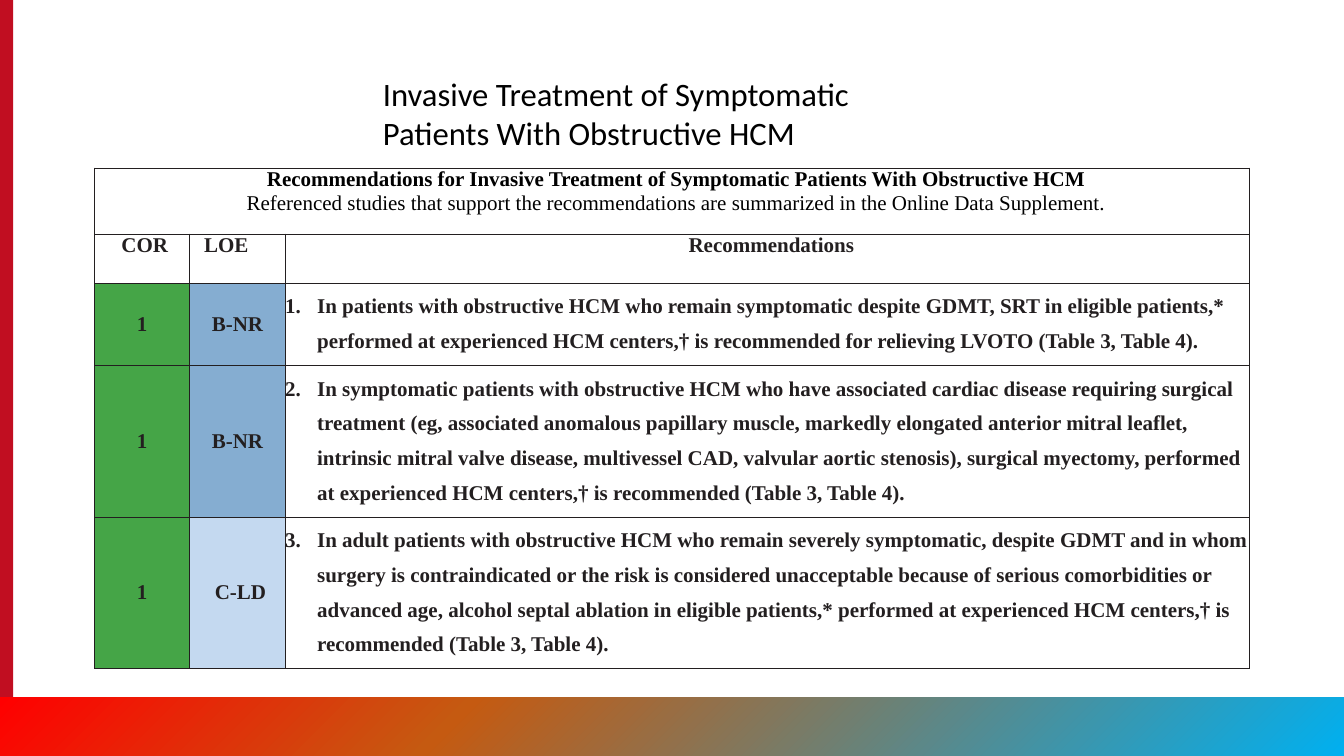
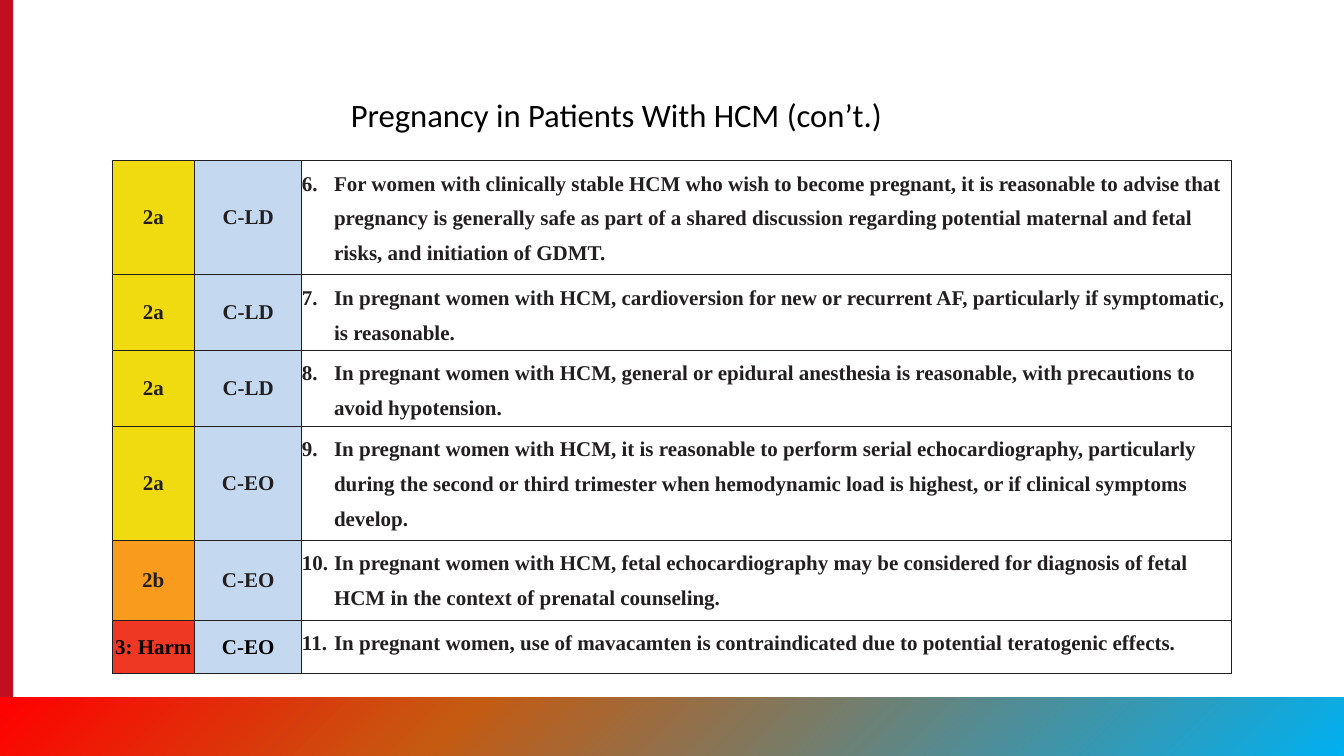
import pptx
import pptx.util
import pptx.dml.color
import pptx.enum.shapes
import pptx.enum.text
import pptx.oxml
from pptx.oxml.ns import nsdecls
from pptx.util import Cm

Align = pptx.enum.text.PP_ALIGN
Anchor = pptx.enum.text.MSO_ANCHOR
Color = pptx.dml.color.RGBColor.from_string

theme = {
    "ink": "231F20", "black": "000000", "white": "FFFFFF", "side": "C10E21",
    "band": [(0, "00B0F0"), (66, "C55A11"), (100, "FF0000")],
    "class": {"1": "45A547", "2a": "F0DA10", "2b": "F99B1C", "3: Harm": "EF3824"},
    "evidence": {"B-NR": "85ADD1", "C-LD": "C4D9F0", "C-EO": "C4D9F0"},
    "title": {"name": "Calibri", "size": pptx.util.Pt(28), "bold": False},
    "table": {"name": "Times New Roman", "size": pptx.util.Pt(18), "bold": True},
    "border": pptx.util.Pt(1),
    "number_indent": Cm(0.97),
    "line_spacing": 1.5,
}

pages = [
    {
        "title": "Invasive Treatment of Symptomatic Patients With Obstructive HCM",
        "title_at": (11.33, 2.11, 18.01, 2.64),
        "table_at": (2.86, 5.08),
        "columns": [2.88, 2.88, 29.16],
        "rows": [2, 1.48, 2.5, 4.56, 4.56],
        "heading": [
            "Recommendations for Invasive Treatment of Symptomatic Patients With Obstructive HCM",
            "Referenced studies that support the recommendations are summarized in the Online Data Supplement.",
        ],
        "labels": [("COR", Align.CENTER, 0.15), ("LOE", Align.LEFT, 0.43),
                   ("Recommendations", Align.CENTER, 0.25)],
        "first_number": 1,
        "items": [
            ("1", "B-NR", "In patients with obstructive HCM who remain symptomatic despite GDMT, SRT in eligible patients,* performed at experienced HCM centers,† is recommended for relieving LVOTO (Table 3, Table 4)."),
            ("1", "B-NR", "In symptomatic patients with obstructive HCM who have associated cardiac disease requiring surgical treatment (eg, associated anomalous papillary muscle, markedly elongated anterior mitral leaflet, intrinsic mitral valve disease, multivessel CAD, valvular aortic stenosis), surgical myectomy, performed at experienced HCM centers,† is recommended (Table 3, Table 4)."),
            ("1", "C-LD", "In adult patients with obstructive HCM who remain severely symptomatic, despite GDMT and in whom surgery is contraindicated or the risk is considered unacceptable because of serious comorbidities or advanced age, alcohol septal ablation in eligible patients,* performed at experienced HCM centers,† is recommended (Table 3, Table 4)."),
        ],
        "evidence_indent": {"C-LD": 0.18},
    },
    {
        "title": "Pregnancy in Patients With HCM (con’t.)",
        "title_at": (10.36, 2.74, 19.89, 1.45),
        "table_at": (3.39, 4.86),
        "columns": [2.49, 3.25, 28.12],
        "rows": [3.45, 2.29, 2.28, 3.45, 2.42, 1.61],
        "heading": [],
        "labels": [],
        "first_number": 6,
        "items": [
            ("2a", "C-LD", "For women with clinically stable HCM who wish to become pregnant, it is reasonable to advise that pregnancy is generally safe as part of a shared discussion regarding potential maternal and fetal risks, and initiation of GDMT."),
            ("2a", "C-LD", "In pregnant women with HCM, cardioversion for new or recurrent AF, particularly if symptomatic, is reasonable."),
            ("2a", "C-LD", "In pregnant women with HCM, general or epidural anesthesia is reasonable, with precautions to avoid hypotension."),
            ("2a", "C-EO", "In pregnant women with HCM, it is reasonable to perform serial echocardiography, particularly during the second or third trimester when hemodynamic load is highest, or if clinical symptoms develop."),
            ("2b", "C-EO", "In pregnant women with HCM, fetal echocardiography may be considered for diagnosis of fetal HCM in the context of prenatal counseling."),
            ("3: Harm", "C-EO", "In pregnant women, use of mavacamten is contraindicated due to potential teratogenic effects."),
        ],
        "evidence_indent": {},
    },
]


def write(para, text, style, color):
    span = para.add_run()
    span.text = text
    for name, value in style.items():
        setattr(span.font, name, value)
    span.font.color.rgb = Color(color)


def write_cell(cell, text, align=Align.CENTER, indent=0, color=theme["ink"], fill=None):
    para = cell.text_frame.paragraphs[0]
    para.alignment = align
    para._p.get_or_add_pPr().set("marL", str(Cm(indent)))
    write(para, text, theme["table"], color)
    if fill:
        cell.fill.solid()
        cell.fill.fore_color.rgb = Color(fill)
        cell.vertical_anchor = Anchor.MIDDLE
    return para


deck = pptx.Presentation()
deck.slide_width = Cm(40.64)
deck.slide_height = Cm(22.86)

for page in pages:
    slide = deck.slides.add_slide(deck.slide_layouts[6])
    rectangle = pptx.enum.shapes.MSO_SHAPE.RECTANGLE
    side = slide.shapes.add_shape(rectangle, 0, 0, Cm(0.4), deck.slide_height)
    side.fill.solid()
    side.fill.fore_color.rgb = Color(theme["side"])
    band = slide.shapes.add_shape(rectangle, 0, Cm(21.08), deck.slide_width, Cm(1.78))
    band.rotation = 180
    stops = "".join(
        f'<a:gs pos="{place * 1000}"><a:srgbClr val="{color}"/></a:gs>'
        for place, color in theme["band"])
    band._element.spPr.append(pptx.oxml.parse_xml(
        f'<a:gradFill {nsdecls("a")} rotWithShape="1"><a:gsLst>{stops}</a:gsLst>'
        '<a:lin ang="2700000" scaled="0"/></a:gradFill>'))
    for shape in (side, band):
        shape.shadow.inherit = False
        shape.line.fill.background()

    box = slide.shapes.add_textbox(*map(Cm, page["title_at"]))
    box.text_frame.word_wrap = True
    box.text_frame.auto_size = pptx.enum.text.MSO_AUTO_SIZE.SHAPE_TO_FIT_TEXT
    write(box.text_frame.paragraphs[0], page["title"], theme["title"], theme["black"])

    frame = slide.shapes.add_table(
        len(page["rows"]), len(page["columns"]), *map(Cm, page["table_at"]),
        Cm(sum(page["columns"])), Cm(sum(page["rows"])))
    table = frame.table
    table.first_row = False
    table.horz_banding = False
    for column, width in zip(table.columns, page["columns"]):
        column.width = Cm(width)
    for row, height in zip(table.rows, page["rows"]):
        row.height = Cm(height)
    for cell in table.iter_cells():
        for margin in ("margin_left", "margin_top", "margin_right", "margin_bottom"):
            setattr(cell, margin, 0)
        cell.fill.solid()
        cell.fill.fore_color.rgb = Color(theme["white"])
        for position, edge in enumerate("LRTB"):
            cell._tc.get_or_add_tcPr().insert(position, pptx.oxml.parse_xml(
                f'<a:ln{edge} {nsdecls("a")} w="{theme["border"]}"><a:solidFill>'
                f'<a:srgbClr val="{theme["ink"]}"/></a:solidFill></a:ln{edge}>'))

    if page["heading"]:
        heading = table.cell(0, 0)
        heading.merge(table.cell(0, 2))
        write_cell(heading, page["heading"][0], indent=0.25, color=theme["black"])
        para = heading.text_frame.add_paragraph()
        para.alignment = Align.CENTER
        para._p.get_or_add_pPr().set("marL", str(Cm(0.25)))
        write(para, page["heading"][1], {**theme["table"], "bold": False}, theme["black"])
    for column, (label, align, indent) in enumerate(page["labels"]):
        write_cell(table.cell(1, column), label, align, indent)

    first_row = len(page["rows"]) - len(page["items"])
    for offset, (grade, evidence, advice) in enumerate(page["items"]):
        cells = table.rows[first_row + offset].cells
        color = theme["black"] if grade == "3: Harm" else theme["ink"]
        write_cell(cells[0], grade, color=color, fill=theme["class"][grade])
        write_cell(cells[1], evidence, indent=page["evidence_indent"].get(evidence, 0),
                   color=color, fill=theme["evidence"][evidence])
        para = write_cell(cells[2], advice, Align.LEFT)
        para.line_spacing = theme["line_spacing"]
        properties = para._p.get_or_add_pPr()
        properties.set("marL", str(theme["number_indent"]))
        properties.set("indent", str(-theme["number_indent"]))
        for element in (
            f'<a:buClr {nsdecls("a")}><a:srgbClr val="{theme["ink"]}"/></a:buClr>',
            f'<a:buFont {nsdecls("a")} typeface="{theme["table"]["name"]}"/>',
            f'<a:buAutoNum {nsdecls("a")} type="arabicPeriod" startAt="{page["first_number"] + offset}"/>',
        ):
            properties.append(pptx.oxml.parse_xml(element))

deck.save("out.pptx")
